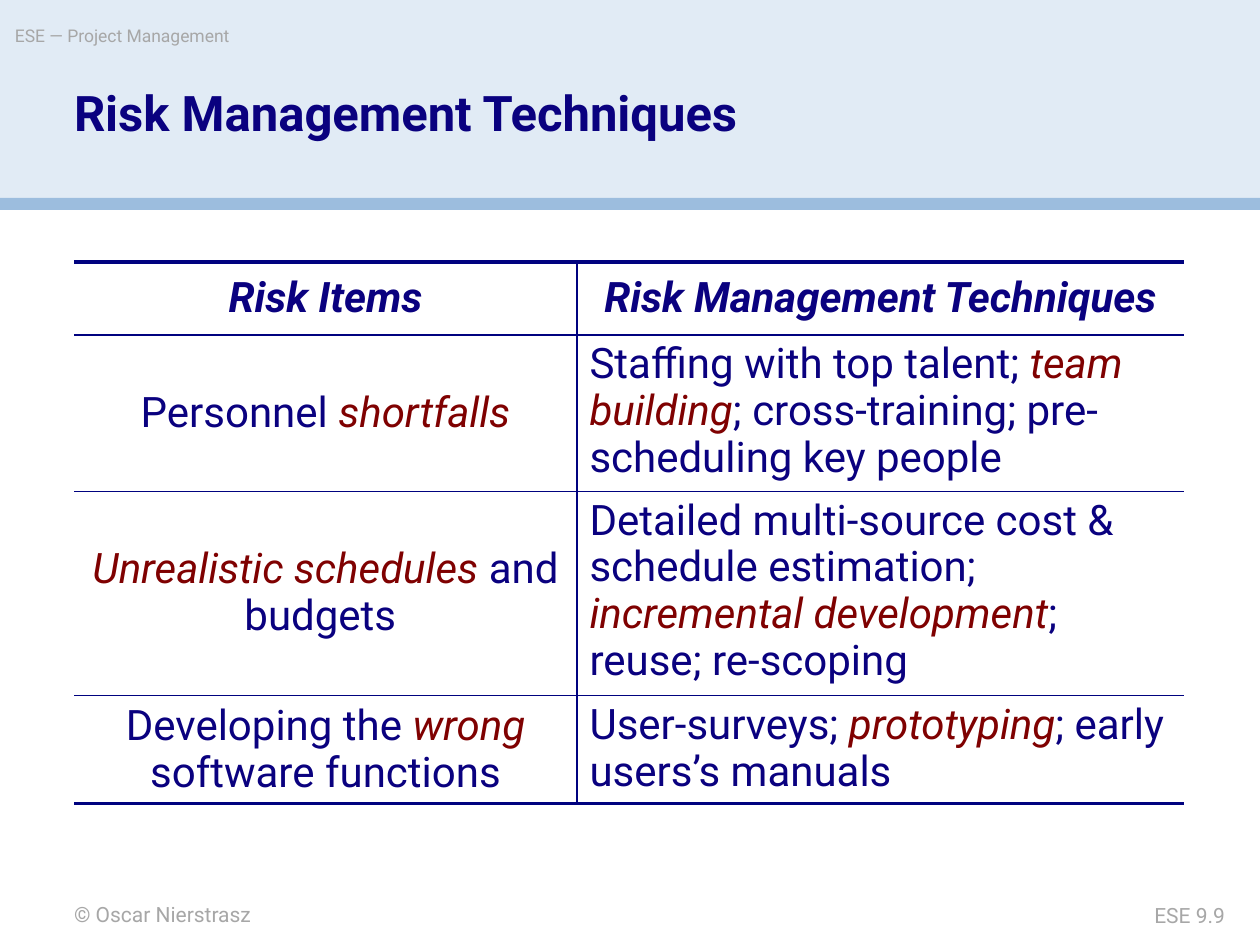
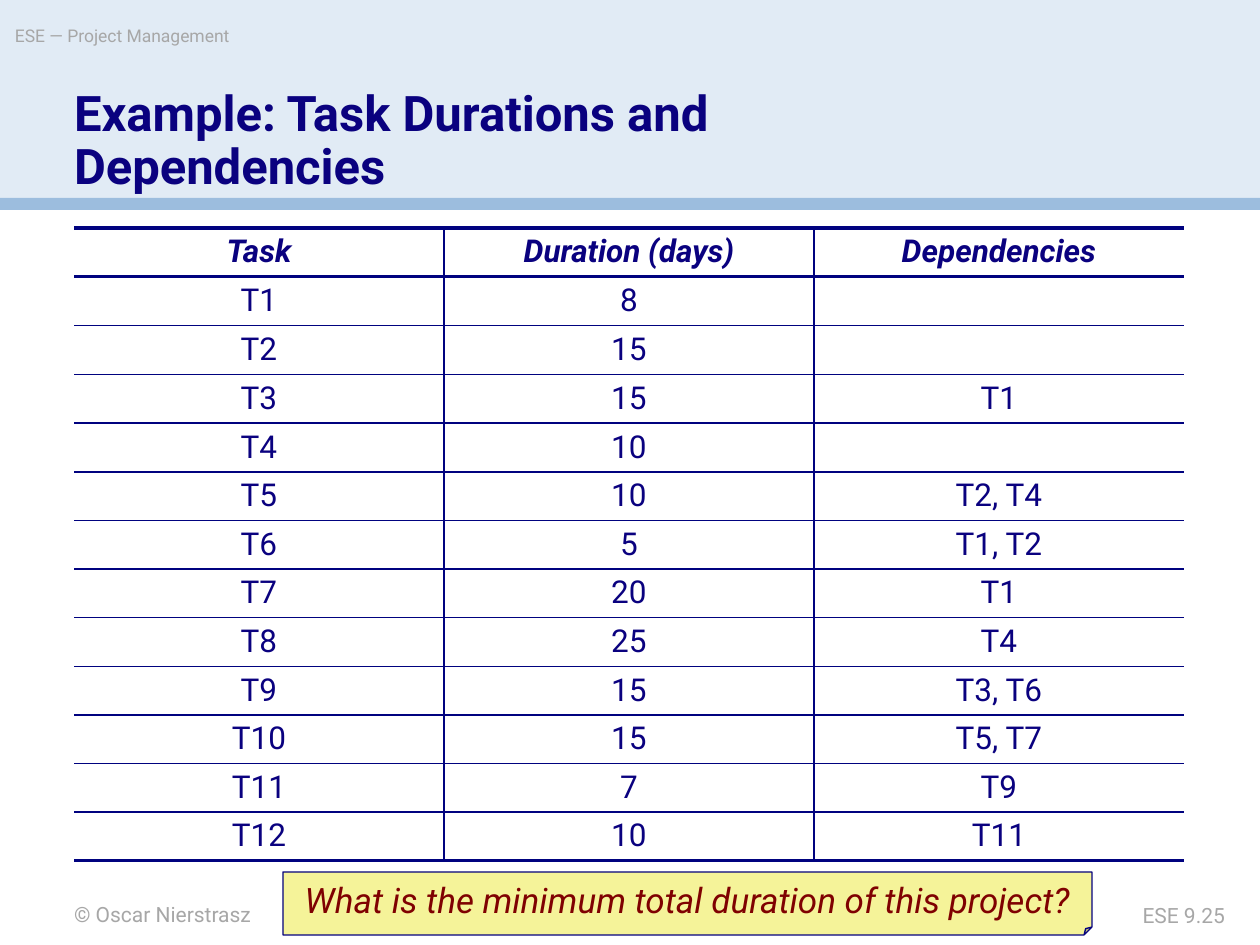
import pptx
import pptx.util
import pptx.dml.color
import pptx.enum.shapes
import pptx.enum.text
import pptx.oxml
import pptx.oxml.ns
import lxml.etree

RGB = pptx.dml.color.RGBColor
SHAPE = pptx.enum.shapes.MSO_SHAPE
ALIGN = pptx.enum.text.PP_ALIGN
ANCHOR = pptx.enum.text.MSO_ANCHOR
FIT = pptx.enum.text.MSO_AUTO_SIZE

PALE = RGB(0xE1, 0xEB, 0xF5)
BLUE = RGB(0x9C, 0xBD, 0xDE)
NAVY = RGB(0x0A, 0x01, 0x7F)
RULE = RGB(0x00, 0x02, 0x7F)
EDGE = RGB(0x05, 0x02, 0x7D)
RED = RGB(0x7F, 0x01, 0x01)
GREY = RGB(0xA7, 0xA7, 0xA7)
CREAM = RGB(0xF5, 0xF3, 0x99)
FONT = "Roboto"
PLAIN = "{2D5ABB26-0587-4C30-8999-92F81FD0307C}"
THIN, THICK = 1, 2.25
SCALE = 914400 / 126


def place(*px):
    return [pptx.util.Emu(round(n * SCALE)) for n in px]


def style(par, size, hue, align=ALIGN.LEFT, bold=False, slant=False):
    par.alignment = align
    par.font.name = FONT
    par.font.size = pptx.util.Pt(size)
    par.font.color.rgb = hue
    par.font.bold = bold
    par.font.italic = slant


risks = [
    ["Risk Items", "Risk Management Techniques"],
    ["Personnel *shortfalls*",
     "Staffing with top talent; *team building*; cross-training; pre-scheduling key people"],
    ["*Unrealistic schedules* and budgets ",
     "Detailed multi-source cost & schedule estimation; *incremental development*; reuse; re-scoping"],
    ["Developing the *wrong* software functions",
     "User-surveys; *prototyping*; early users’s manuals"],
]
tasks = [
    ["Task", "Duration (days)", "Dependencies"],
    ["T1", "8", ""],
    ["T2", "15", ""],
    ["T3", "15", "T1"],
    ["T4", "10", ""],
    ["T5", "10", "T2, T4"],
    ["T6", "5", "T1, T2"],
    ["T7", "20", "T1"],
    ["T8", "25", "T4"],
    ["T9", "15", "T3, T6"],
    ["T10", "15", "T5, T7"],
    ["T11", "7", "T9"],
    ["T12", "10", "T11"],
]
deck = [
    dict(title="Risk Management Techniques", page="ESE 9.9", grid=risks, top=262,
         wide=[503, 607], high=[73, 153, 200, 107], size=24, head=THIN, prose=1),
    dict(title="Example: Task Durations and Dependencies", page="ESE 9.25", grid=tasks, top=228,
         wide=[370] * 3, high=[48 if row[-1] else 49 for row in tasks], size=18, head=THICK, prose=None),
]

prs = pptx.Presentation()
prs.slide_width, prs.slide_height = place(1260, 945)
base = prs.slide_layouts[5]
slides = [prs.slides.add_slide(base) for _ in deck]

for spot, (box, hue) in enumerate([((0, 0, 1260, 199), PALE), ((0, 198, 1260, 12), BLUE)]):
    band = slides[0].shapes.add_shape(SHAPE.RECTANGLE, *place(*box))
    band.shadow.inherit = False
    band.fill.solid()
    band.fill.fore_color.rgb = hue
    band.line.fill.background()
    base.shapes._spTree.insert(2 + spot, band._element)

for slide, data in zip(slides, deck):
    title = slide.shapes.title
    title.left, title.top, title.width, title.height = place(74, 89, 912, 112)
    frame = title.text_frame
    frame.text = data["title"]
    frame.auto_size = FIT.NONE
    frame.vertical_anchor = ANCHOR.TOP
    frame.margin_left = frame.margin_right = frame.margin_top = frame.margin_bottom = 0
    style(frame.paragraphs[0], 28, NAVY, bold=True)
    frame.paragraphs[0].line_spacing = 0.9

    notes = [
        ("© Oscar Nierstrasz", (74, 902, 525, 25), 12, ALIGN.LEFT, True),
        ("ESE — Project Management", (15, 25, 743, 35), 10, ALIGN.LEFT, False),
        (data["page"], (1039, 903, 186, 25), 12, ALIGN.RIGHT, True),
    ]
    for text, box, size, align, wrap in notes:
        frame = slide.shapes.add_textbox(*place(*box)).text_frame
        frame.word_wrap = wrap
        frame.margin_left = frame.margin_right = frame.margin_top = frame.margin_bottom = 0
        frame.text = text
        style(frame.paragraphs[0], size, GREY, align)

    grid, wide, high = data["grid"], data["wide"], data["high"]
    table = slide.shapes.add_table(
        len(grid), len(wide), *place(74, data["top"], sum(wide), sum(high))).table
    table.first_row = table.horz_banding = False
    table._tbl.tblPr.find(pptx.oxml.ns.qn("a:tableStyleId")).text = PLAIN
    for col, width in zip(table.columns, place(*wide)):
        col.width = width
    for row, height in zip(table.rows, place(*high)):
        row.height = height

    rules = [THICK, data["head"]] + [THIN] * (len(grid) - 2) + [THICK]
    for r, row in enumerate(grid):
        for c, text in enumerate(row):
            cell = table.cell(r, c)
            prose = r > 0 and c == data["prose"]
            cell.vertical_anchor = ANCHOR.TOP if prose else ANCHOR.MIDDLE
            par = cell.text_frame.paragraphs[0]
            style(par, data["size"] if text else 12, NAVY,
                  ALIGN.LEFT if prose else ALIGN.CENTER, r == 0, r == 0)
            par.line_spacing = 0.95
            for n, part in enumerate(text.split("*")):
                if part:
                    run = par.add_run()
                    run.text = part
                    if n % 2:
                        run.font.italic = True
                        run.font.color.rgb = RED
            props = cell._tc.get_or_add_tcPr()
            sides = [("L", THIN if c else 0), ("R", THIN if c < len(row) - 1 else 0),
                     ("T", rules[r]), ("B", rules[r + 1])]
            for side, weight in sides:
                if weight:
                    line = lxml.etree.SubElement(props, pptx.oxml.ns.qn("a:ln" + side),
                                                 w=str(pptx.util.Pt(weight)))
                    fill = lxml.etree.SubElement(line, pptx.oxml.ns.qn("a:solidFill"))
                    lxml.etree.SubElement(fill, pptx.oxml.ns.qn("a:srgbClr"), val=str(RULE))
            cell.fill.background()

quiz = slides[1].shapes.add_shape(SHAPE.FOLDED_CORNER, *place(283, 872, 809, 63))
folds = quiz._element.spPr.prstGeom.get_or_add_avLst()
lxml.etree.SubElement(folds, pptx.oxml.ns.qn("a:gd"), name="adj", fmla="val 12500")
quiz.shadow.inherit = False
quiz.fill.solid()
quiz.fill.fore_color.rgb = CREAM
quiz.line.color.rgb = EDGE
quiz.line.width = pptx.util.Pt(0.75)
frame = quiz.text_frame
frame.word_wrap = False
frame.vertical_anchor = ANCHOR.MIDDLE
frame.text = "What is the minimum total duration of this project?"
style(frame.paragraphs[0], 20, RED, ALIGN.CENTER, slant=True)

prs.save("out.pptx")
